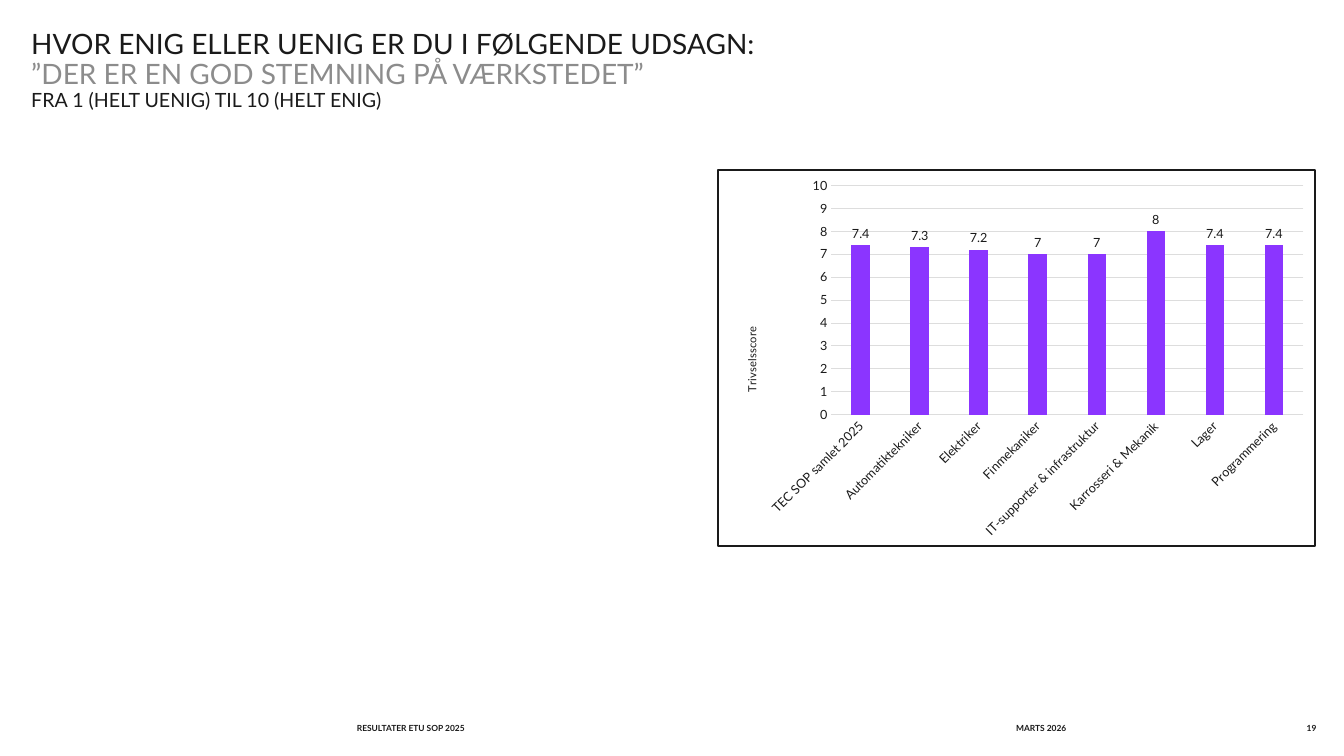
from lxml import etree
from pptx import Presentation
from pptx.chart.data import CategoryChartData
from pptx.dml.color import RGBColor
from pptx.enum.chart import XL_CHART_TYPE as ChartType
from pptx.enum.chart import XL_LABEL_POSITION as LabelPosition
from pptx.enum.chart import XL_TICK_MARK as TickMark
from pptx.enum.text import MSO_ANCHOR as Anchor
from pptx.enum.text import PP_ALIGN as Align
from pptx.oxml import parse_xml
from pptx.oxml.ns import nsdecls, qn
from pptx.util import Pt

FONT = "Lato"
INK, GREY, RULE, PURPLE, WHITE = "1A1A1A", "8C8C8C", "DDDDDD", "8B35FF", "FFFFFF"

HEADING = [
    ("HVOR ENIG ELLER UENIG ER DU I FØLGENDE UDSAGN:", 20, INK),
    ("”DER ER EN GOD STEMNING PÅ VÆRKSTEDET”", 20, GREY),
    ("FRA 1 (HELT UENIG) TIL 10 (HELT ENIG)", 14, INK),
]
SCORES = {
    "TEC SOP samlet 2025": 7.4,
    "Automatiktekniker": 7.3,
    "Elektriker": 7.2,
    "Finmekaniker": 7,
    "IT-supporter & infrastruktur": 7,
    "Karrosseri & Mekanik": 8,
    "Lager": 7.4,
    "Programmering": 7.4,
}


def color(value):
    return RGBColor.from_string(value)


def style_font(font, size, ink=INK, bold=False):
    font.name = FONT
    font.size = Pt(size)
    font.bold = bold
    font.color.rgb = color(ink)


def style_line(line, ink, width):
    line.color.rgb = color(ink)
    line.width = Pt(width)


def add_text(slide, bounds, lines, anchor=Anchor.TOP, align=Align.LEFT, bold=False, spacing=1.0):
    """Add a text box with one paragraph per (text, size, colour) line."""
    frame = slide.shapes.add_textbox(*map(Pt, bounds)).text_frame
    frame.word_wrap = True
    frame.vertical_anchor = anchor
    frame.margin_left = frame.margin_top = frame.margin_right = frame.margin_bottom = 0
    for index, (text, size, ink) in enumerate(lines):
        para = frame.add_paragraph() if index else frame.paragraphs[0]
        para.text = text
        para.alignment = align
        para.line_spacing = spacing
        style_font(para.font, size, ink, bold)


def add_footer(slide, left, width, text, align=Align.LEFT):
    add_text(slide, (left, 514.8, width, 10.8), [(text, 6, INK)], Anchor.MIDDLE, align, bold=True)


def place(parent, index, target=None, **fractions):
    """Give a chart part a manual layout, in fractions of the chart."""
    for old in parent.findall(qn("c:layout")):
        parent.remove(old)
    layout = parse_xml(f"<c:layout {nsdecls('c')}><c:manualLayout/></c:layout>")
    settings = {"layoutTarget": target} if target else {}
    settings |= {"xMode": "edge", "yMode": "edge"} | fractions
    for name, value in settings.items():
        etree.SubElement(layout[0], qn(f"c:{name}")).set("val", str(value))
    parent.insert(index, layout)


def frame_chart(chart):
    """Fill the chart area and draw its border."""
    properties = parse_xml(
        f"<c:spPr {nsdecls('c', 'a')}>"
        f'<a:solidFill><a:srgbClr val="{WHITE}"/></a:solidFill>'
        f'<a:ln w="{Pt(1.5)}"><a:solidFill><a:srgbClr val="{INK}"/></a:solidFill></a:ln>'
        "</c:spPr>"
    )
    chart.element.find(qn("c:chart")).addnext(properties)


def style_axes(chart):
    category, value = chart.category_axis, chart.value_axis
    for axis in (category, value):
        axis.major_tick_mark = axis.minor_tick_mark = TickMark.NONE
        style_font(axis.tick_labels.font, 9)
    style_line(category.format.line, RULE, 0.75)
    body = category._element.find(qn("c:txPr")).find(qn("a:bodyPr"))
    body.set("rot", "-2700000")
    body.set("vert", "horz")

    value.minimum_scale, value.maximum_scale, value.major_unit = 0, 10, 1
    value.format.line.fill.background()
    style_line(value.major_gridlines.format.line, RULE, 0.75)
    frame = value.axis_title.text_frame
    frame.text = "Trivselsscore"
    style_font(frame.paragraphs[0].font, 8)
    body = frame._txBody.find(qn("a:bodyPr"))
    body.set("rot", "-5400000")
    body.set("vert", "horz")
    place(value.axis_title._element, 1, x=0.04, y=0.41)


def add_score_chart(slide, bounds):
    data = CategoryChartData()
    data.categories = list(SCORES)
    data.add_series("Series 1", list(SCORES.values()))
    chart = slide.shapes.add_chart(ChartType.COLUMN_CLUSTERED, *map(Pt, bounds), data).chart
    chart.has_title = chart.has_legend = False
    style_font(chart.font, 10)
    frame_chart(chart)
    style_axes(chart)
    plot_area = chart.element.find(qn("c:chart")).find(qn("c:plotArea"))
    place(plot_area, 0, "inner", x=0.19, y=0.04, w=0.79, h=0.61)

    plot = chart.plots[0]
    plot.gap_width, plot.overlap = 219, -27
    plot.vary_by_categories = False
    fill = plot.series[0].format.fill
    fill.solid()
    fill.fore_color.rgb = color(PURPLE)
    plot.has_data_labels = True
    labels = plot.data_labels
    labels.show_value = True
    labels.position = LabelPosition.OUTSIDE_END
    style_font(labels.font, 9)


def main():
    deck = Presentation()
    deck.slide_width, deck.slide_height = Pt(960), Pt(540)
    slide = deck.slides.add_slide(deck.slide_layouts[6])
    add_footer(slide, 725.8, 107.3, "MARTS 2026")
    add_footer(slide, 254.9, 317.5, "RESULTATER ETU SOP 2025")
    add_footer(slide, 889.9, 50.4, "19", Align.RIGHT)
    add_text(slide, (22.3, 21.6, 918, 84.2), HEADING, spacing=0.9)
    add_score_chart(slide, (511.9, 121, 428.4, 270))
    deck.save("out.pptx")


if __name__ == "__main__":
    main()
